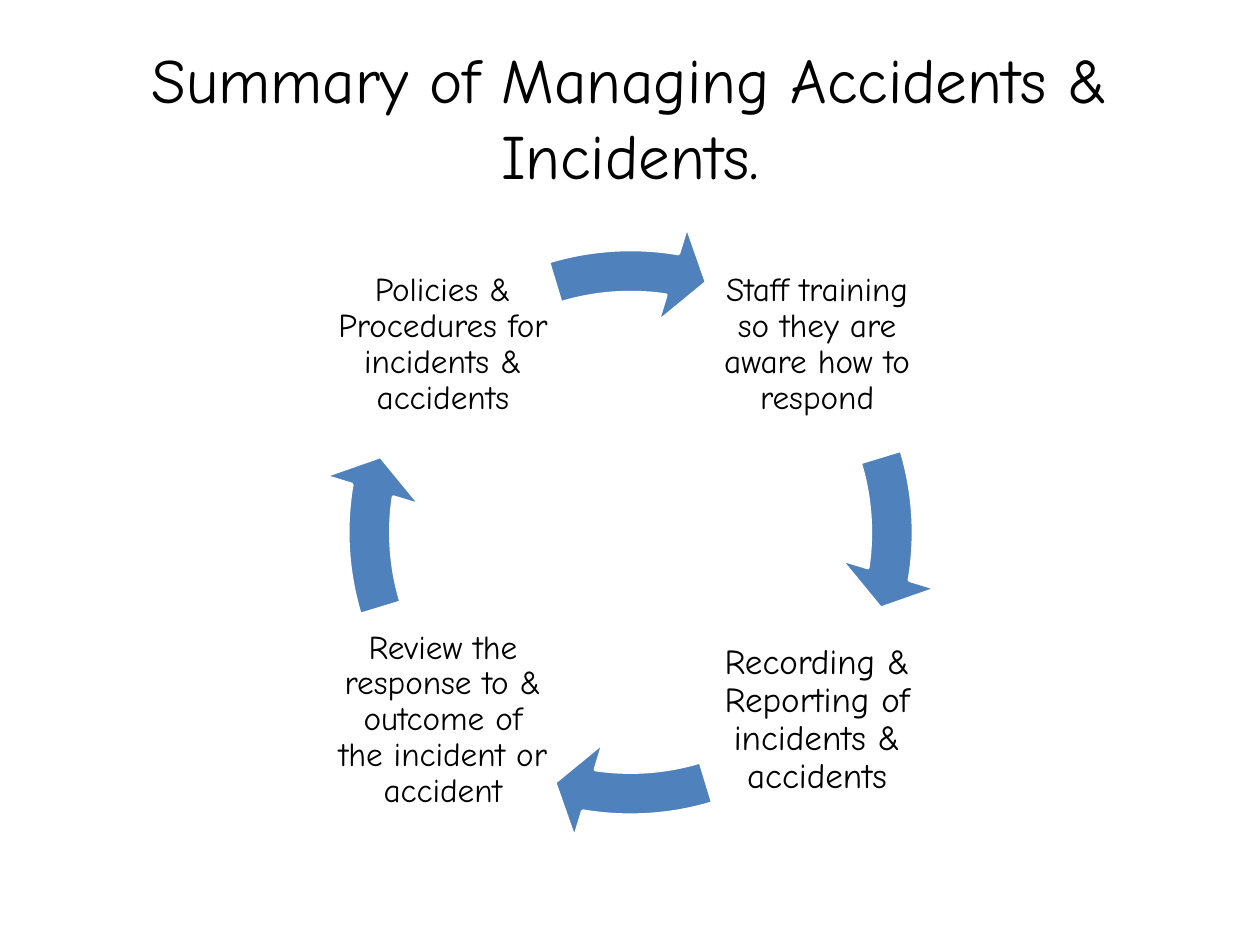
import pptx
import pptx.util
import pptx.enum.text
import pptx.enum.shapes
import pptx.dml.color

Inches = pptx.util.Inches
Pt = pptx.util.Pt

# Content: steps clockwise from top right: text, size, column, row
TITLE = "Summary of Managing Accidents & Incidents."
STEPS = [
    ("Staff training so they are aware how to respond", 19, 1, 0),
    ("Recording & Reporting of incidents & accidents", 20, 1, 1),
    ("Review the response to & outcome of the incident or accident", 19, 0, 1),
    ("Policies & Procedures for incidents & accidents", 19, 0, 0),
]
COLORS = {"text": "000000", "arrow": "4F81BD", "edge": "FFFFFF"}
FONT = "Comic Neue"

# Cycle geometry; arrow angles are in units of 100000/60000 degree
LEFTS, TOPS, BOX = (2.64, 5.61), (1.86, 4.84), 1.75
RING = (2.53, 1.75, 4.95, 4.95)
THICK, POINT, HEAD = 0.069, 4.654, 0.081
END, START, TURN, QUARTER = 5.49, 205.855, 216, 54


def color(name):
    return pptx.dml.color.RGBColor.from_string(COLORS[name])


def place(shape, left, top, width, height):
    shape.left, shape.top = Inches(left), Inches(top)
    shape.width, shape.height = Inches(width), Inches(height)


def write(shape, text, size, inset=None, spacing=None):
    frame = shape.text_frame
    frame.word_wrap = True
    frame.auto_size = pptx.enum.text.MSO_AUTO_SIZE.NONE
    frame.vertical_anchor = pptx.enum.text.MSO_ANCHOR.MIDDLE
    if inset is not None:
        frame.margin_left = frame.margin_right = Inches(inset)
        frame.margin_top = frame.margin_bottom = Inches(inset)
    par = frame.paragraphs[0]
    par.alignment = pptx.enum.text.PP_ALIGN.CENTER
    if spacing is not None:
        par.line_spacing = spacing
    run = par.add_run()
    run.text = text
    run.font.name, run.font.size = FONT, Pt(size)
    run.font.color.rgb = color("text")


def add_arrow(shapes, index):
    arrow = shapes.add_shape(
        pptx.enum.shapes.MSO_SHAPE.CIRCULAR_ARROW, *map(Inches, RING))
    shift = index * QUARTER
    angles = (END + shift, (START + shift) % TURN)
    for pos, value in enumerate((THICK, POINT, *angles, HEAD)):
        arrow.adjustments[pos] = value
    arrow.shadow.inherit = False
    arrow.fill.solid()
    arrow.fill.fore_color.rgb = color("arrow")
    arrow.line.color.rgb = color("edge")
    arrow.line.width = Pt(2)


def main():
    deck = pptx.Presentation()
    deck.slide_width, deck.slide_height = Inches(10), Inches(7.5)
    slide = deck.slides.add_slide(deck.slide_layouts[5])

    # Title
    title = slide.shapes.title
    place(title, 0.5, 0.3, 9, 1.25)
    write(title, TITLE, 36)

    # Cycle of steps, each followed by its arrow
    cycle = slide.shapes.add_group_shape().shapes
    for index, (text, size, col, row) in enumerate(STEPS):
        box = cycle.add_textbox(*map(Inches, (LEFTS[col], TOPS[row], BOX, BOX)))
        write(box, text, size, inset=0.03, spacing=0.9)
        add_arrow(cycle, index)

    deck.save("out.pptx")


if __name__ == "__main__":
    main()
